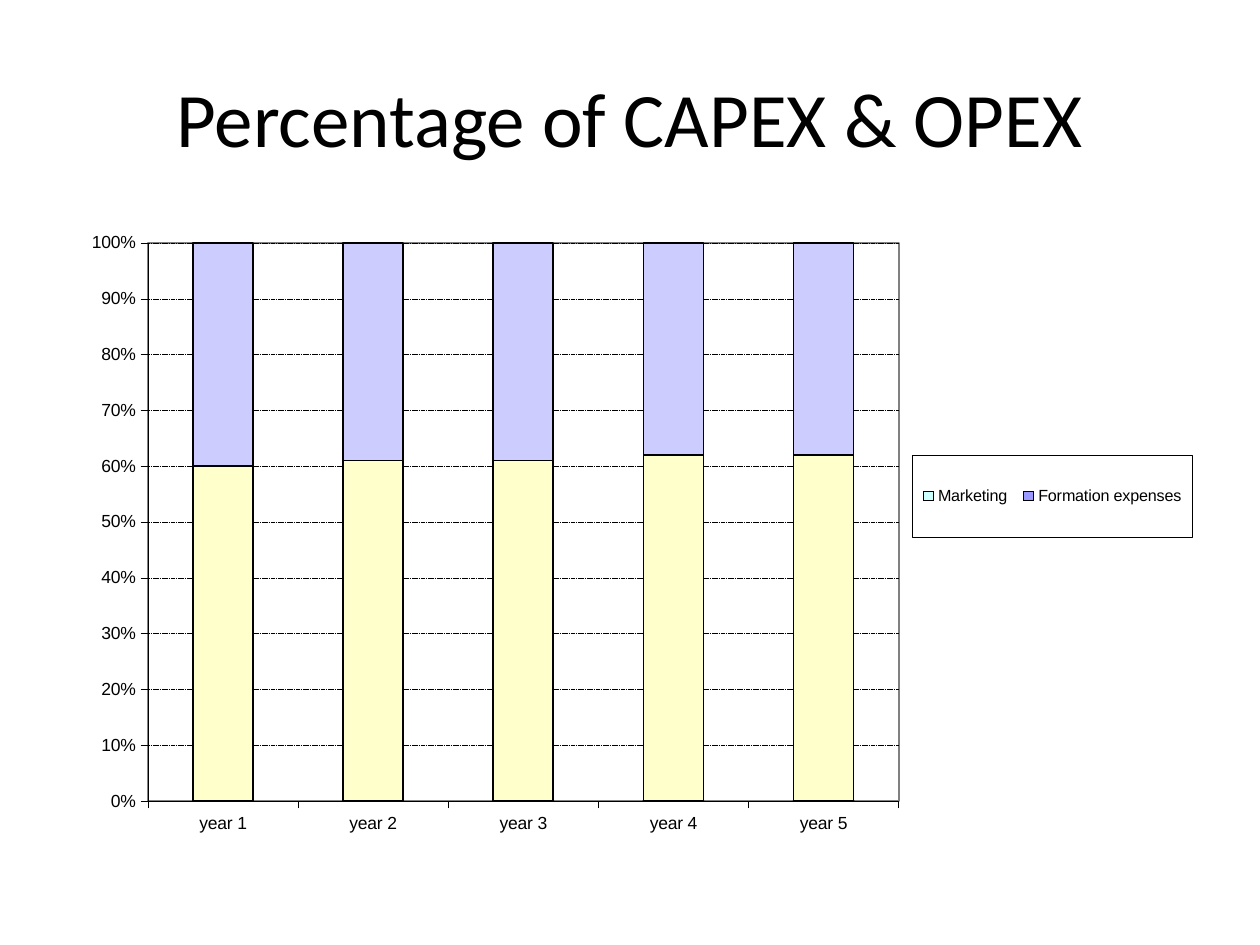
import pptx
import pptx.chart.data
import pptx.dml.color
import pptx.enum.chart
import pptx.enum.dml
import pptx.enum.text
import pptx.oxml
import pptx.oxml.ns
import pptx.util

Pt = pptx.util.Pt
qn = pptx.oxml.ns.qn
NS = pptx.oxml.ns.nsdecls("c", "a")
COLORS = {"black": "000000", "frame": "808080"}
SERIES = [
    ("Formation expenses", "9999FF", [0] * 5),
    ("Series 2", "993366", [0] * 5),
    ("Series 3", "FFFFCC", [60, 61, 61, 62, 62]),
    ("Marketing", "CCFFFF", [0] * 5),
    ("Series 5", "0066CC", [0] * 5),
    ("Series 6", "CCCCFF", [40, 39, 39, 38, 38]),
]
HIDDEN_ENTRIES = [1, 2, 4, 5]


def rgb(value):
    return pptx.dml.color.RGBColor.from_string(value)


def layout_xml(x, y, w, h, target=""):
    return pptx.oxml.parse_xml(
        f'<c:layout {NS}><c:manualLayout>{target}'
        f'<c:xMode val="edge"/><c:yMode val="edge"/><c:x val="{x}"/><c:y val="{y}"/>'
        f'<c:w val="{w}"/><c:h val="{h}"/></c:manualLayout></c:layout>')


prs = pptx.Presentation()
prs.slide_width, prs.slide_height = Pt(720), Pt(540)
s = prs.slides.add_slide(prs.slide_layouts[5])

# Title
sp = s.shapes.title
sp.left, sp.top, sp.width, sp.height = Pt(36), Pt(21.6), Pt(648), Pt(90)
tf = sp.text_frame
tf.vertical_anchor = pptx.enum.text.MSO_ANCHOR.MIDDLE
p = tf.paragraphs[0]
p.alignment = pptx.enum.text.PP_ALIGN.CENTER
r = p.add_run()
r.text = "Percentage of CAPEX & OPEX"
r.font.size, r.font.name = Pt(44), "Calibri"
r.font.color.rgb = rgb(COLORS["black"])

# Stacked percentage chart
data = pptx.chart.data.CategoryChartData()
data.categories = [f"year {n}" for n in range(1, 6)]
for name, color, values in SERIES:
    data.add_series(name, values)
chart = s.shapes.add_chart(
    pptx.enum.chart.XL_CHART_TYPE.COLUMN_STACKED_100,
    Pt(36), Pt(126), Pt(648), Pt(356.4), data).chart
chart.has_title = False
chart.font.size, chart.font.name = Pt(10), "Arial"
chart.font.color.rgb = rgb(COLORS["black"])
plot = chart.plots[0]
plot.gap_width, plot.overlap, plot.vary_by_categories = 150, 100, False
for ser, (name, color, values) in zip(plot.series, SERIES):
    ser.format.fill.solid()
    ser.format.fill.fore_color.rgb = rgb(color)
    ser.format.line.color.rgb = rgb(COLORS["black"])
    ser.format.line.width = Pt(1)

# Axes and gridlines
for axis in (chart.category_axis, chart.value_axis):
    axis.major_tick_mark = pptx.enum.chart.XL_TICK_MARK.OUTSIDE
    axis.minor_tick_mark = pptx.enum.chart.XL_TICK_MARK.NONE
    axis.format.line.color.rgb = rgb(COLORS["black"])
    axis.format.line.width = Pt(0.25)
    axis.tick_labels.font.size, axis.tick_labels.font.name = Pt(10), "Arial"
    axis.tick_labels.font.color.rgb = rgb(COLORS["black"])
labels = chart.value_axis.tick_labels
labels.number_format, labels.number_format_is_linked = "0%", False
chart.value_axis.has_major_gridlines = True
line = chart.value_axis.major_gridlines.format.line
line.color.rgb = rgb(COLORS["black"])
line.width = Pt(0.25)
line.dash_style = pptx.enum.dml.MSO_LINE.SQUARE_DOT
line.dash_style = pptx.enum.dml.MSO_LINE.DASH
line._ln.find(qn("a:prstDash")).set("val", "sysDash")

# Legend text
chart.has_legend = True
legend = chart.legend
legend.position = pptx.enum.chart.XL_LEGEND_POSITION.RIGHT
legend.include_in_layout = False
legend.font.size, legend.font.name = Pt(9.2), "Arial"
legend.font.color.rgb = rgb(COLORS["black"])

# Plot and legend places, frames and hidden legend entries
area = chart._chartSpace.chart.plotArea
box = legend._element
for parent in (area, box):
    for old in parent.findall(qn("c:layout")):
        parent.remove(old)
area.insert(0, layout_xml(0.075, 0.036, 0.662, 0.895, '<c:layoutTarget val="inner"/>'))
overlay = box.find(qn("c:overlay"))
for index in HIDDEN_ENTRIES:
    overlay.addprevious(pptx.oxml.parse_xml(
        f'<c:legendEntry {NS}><c:idx val="{index}"/><c:delete val="1"/></c:legendEntry>'))
overlay.addprevious(layout_xml(0.749, 0.376, 0.247, 0.132))
frames = [pptx.oxml.parse_xml(
    f'<c:spPr {NS}><a:noFill/><a:ln w="{width}"><a:solidFill><a:srgbClr val="{color}"/>'
    '</a:solidFill></a:ln></c:spPr>')
    for width, color in ((Pt(1), COLORS["frame"]), (Pt(0.25), COLORS["black"]))]
area.append(frames[0])
overlay.addnext(frames[1])

prs.save("out.pptx")
